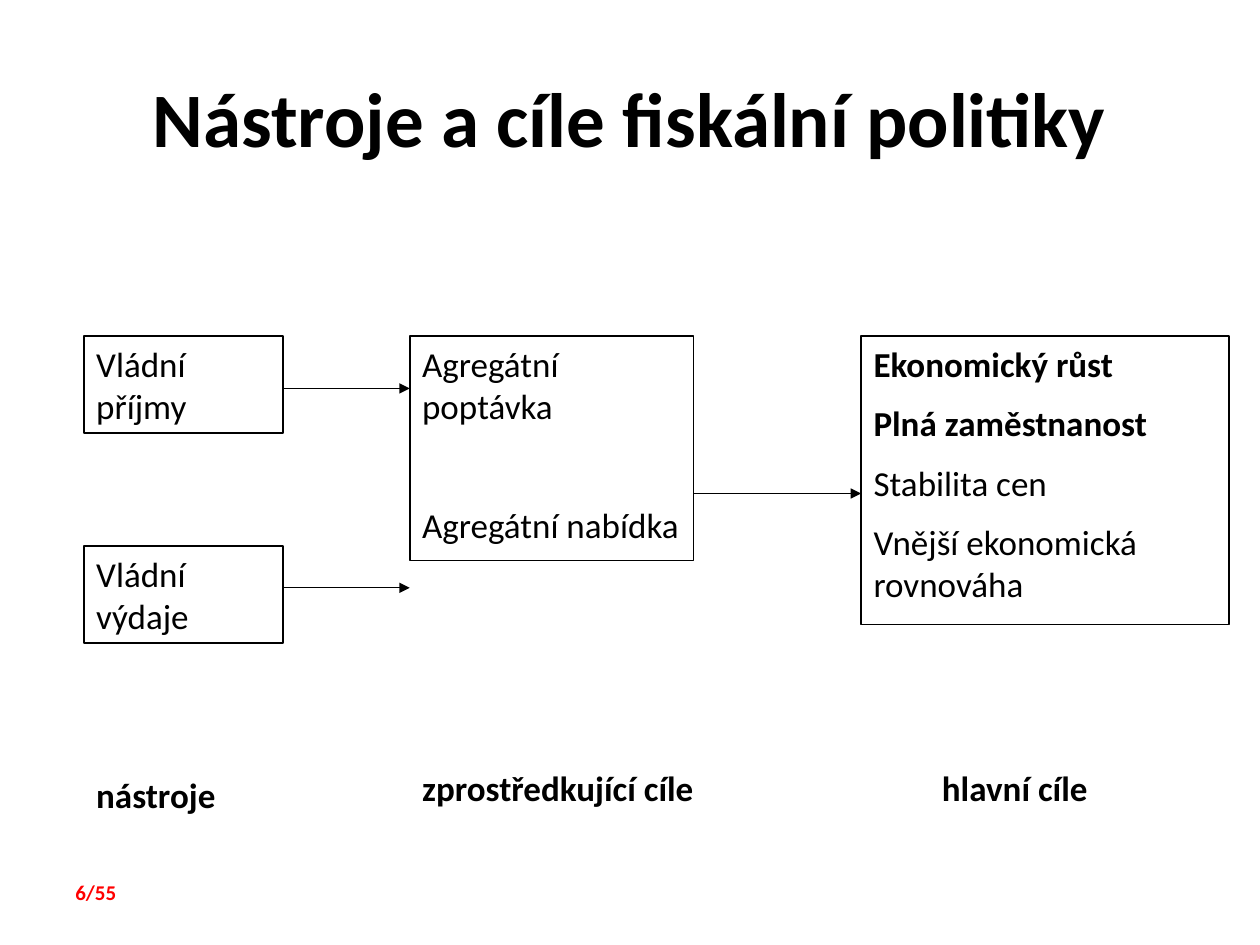
import pptx
import pptx.dml.color
import pptx.enum.shapes
import pptx.enum.text
import pptx.util
from pptx.oxml.ns import qn
from lxml import etree

Cm = pptx.util.Cm
Pt = pptx.util.Pt
BLACK = pptx.dml.color.RGBColor(0, 0, 0)
RED = pptx.dml.color.RGBColor(255, 0, 0)


class Diagram:
    """Holds the style and the current slide."""

    font_name = "Calibri"
    body_size = 20
    paragraph_gap = 10

    def __init__(self, slide):
        self.slide = slide

    def style(self, paragraph, size, bold, color=BLACK):
        font = paragraph.font
        font.name = self.font_name
        font.size = Pt(size)
        font.bold = bold
        font.color.rgb = color

    def title(self, text, left, top, width, height):
        title = self.slide.shapes.title
        title.left, title.top = Cm(left), Cm(top)
        title.width, title.height = Cm(width), Cm(height)
        frame = title.text_frame
        frame.text = text
        frame.vertical_anchor = pptx.enum.text.MSO_ANCHOR.MIDDLE
        frame.paragraphs[0].alignment = pptx.enum.text.PP_ALIGN.CENTER
        self.style(frame.paragraphs[0], 44, True)

    def label(self, text, left, top, width, height, size=body_size, color=BLACK):
        label = self.slide.shapes.add_textbox(Cm(left), Cm(top), Cm(width), Cm(height))
        frame = label.text_frame
        frame.word_wrap = True
        frame.text = text
        self.style(frame.paragraphs[0], size, True, color)

    def box(self, lines, left, top, width, height, bold_lines=0, gap=paragraph_gap):
        box = self.slide.shapes.add_shape(
            pptx.enum.shapes.MSO_SHAPE.RECTANGLE,
            Cm(left), Cm(top), Cm(width), Cm(height))
        box.shadow.inherit = False
        box.fill.background()
        box.line.color.rgb = BLACK
        box.line.width = Pt(1)
        frame = box.text_frame
        frame.word_wrap = True
        frame.vertical_anchor = pptx.enum.text.MSO_ANCHOR.TOP
        frame.text = "\n".join(lines)
        for index, paragraph in enumerate(frame.paragraphs):
            paragraph.alignment = pptx.enum.text.PP_ALIGN.LEFT
            if index:
                paragraph.space_before = Pt(gap)
            self.style(paragraph, self.body_size, index < bold_lines)

    def arrow(self, start, end, y):
        arrow = self.slide.shapes.add_connector(
            pptx.enum.shapes.MSO_CONNECTOR.STRAIGHT, Cm(start), Cm(y), Cm(end), Cm(y))
        arrow.line.color.rgb = BLACK
        arrow.line.width = Pt(0.75)
        etree.SubElement(arrow.line._get_or_add_ln(), qn("a:tailEnd"), type="triangle")
        etree.SubElement(arrow._element.spPr, qn("a:effectLst"))


def main():
    presentation = pptx.Presentation()
    presentation.slide_width, presentation.slide_height = Cm(25.4), Cm(19.05)
    diagram = Diagram(presentation.slides.add_slide(presentation.slide_layouts[5]))

    diagram.title("Nástroje a cíle fiskální politiky", 1.27, 0.76, 22.86, 3.18)

    # Columns: tools, intermediate goals, main goals
    tools_left, tools_width = 1.69, 4.02
    middle_left, middle_width = 8.26, 5.72
    goals_left, goals_width = 17.36, 7.41
    top = 6.77

    # Boxes
    for text, box_top in (("Vládní příjmy", top), ("Vládní výdaje", 11.01)):
        diagram.box([text], tools_left, box_top, tools_width, 1.96)
    diagram.box(["Agregátní poptávka", "Agregátní nabídka"],
                middle_left, top, middle_width, 4.53, gap=44)
    diagram.box(["Ekonomický růst", "Plná zaměstnanost", "Stabilita cen",
                 "Vnější ekonomická rovnováha"],
                goals_left, top, goals_width, 5.82, bold_lines=2)

    # Arrows between the columns
    for y in (7.83, 11.85):
        diagram.arrow(tools_left + tools_width, middle_left, y)
    diagram.arrow(middle_left + middle_width, goals_left, 9.95)

    # Column captions
    diagram.label("nástroje", tools_left, 15.47, tools_width, 1.11)
    diagram.label("zprostředkující cíle", middle_left, 15.32, 6.56, 1.11)
    diagram.label("hlavní cíle", 18.74, 15.32, 4.66, 1.11)

    # Page counter
    diagram.label("6/55", 1.27, 17.6, 2.34, 0.76, size=12, color=RED)

    presentation.save("out.pptx")


if __name__ == "__main__":
    main()
